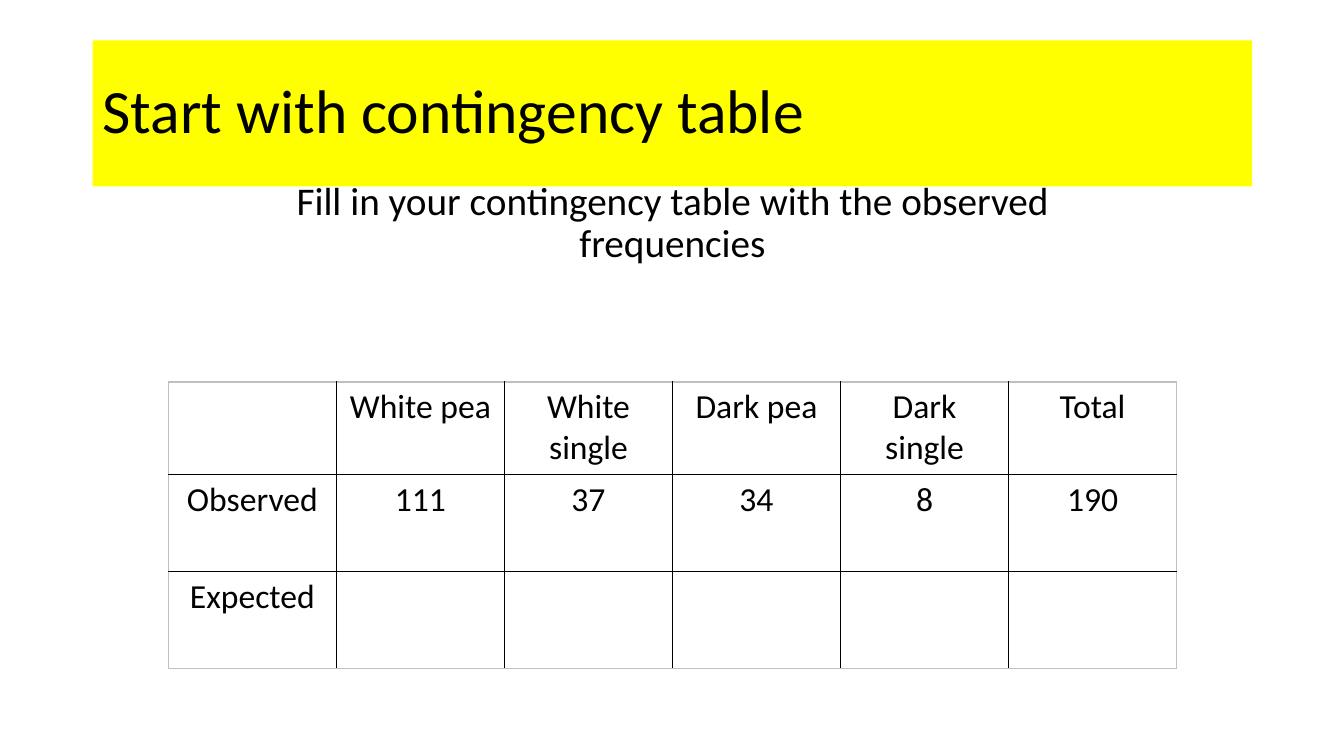
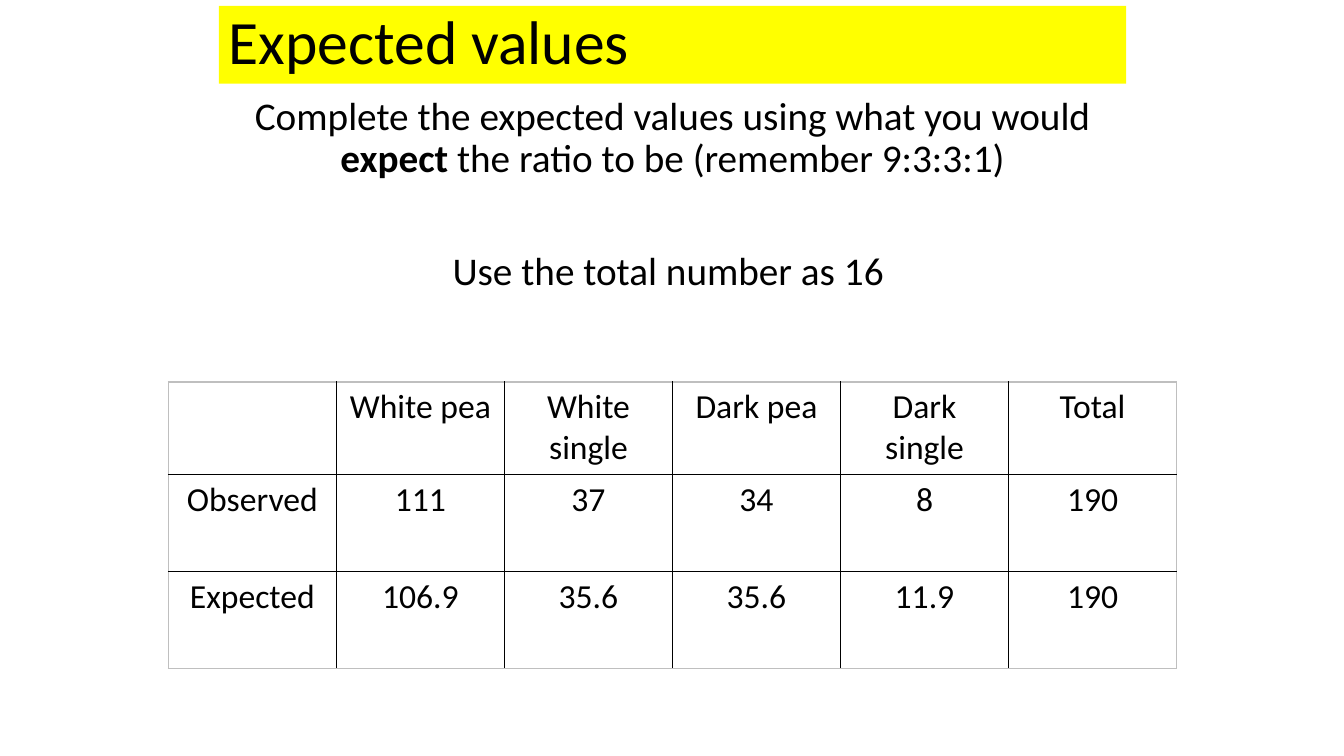
from lxml.etree import SubElement
from pptx import Presentation
from pptx.dml.color import RGBColor
from pptx.enum.shapes import MSO_SHAPE as Shape
from pptx.enum.text import MSO_ANCHOR as Anchor, PP_ALIGN as Align
from pptx.oxml.ns import qn
from pptx.util import Inches, Pt

BLACK = RGBColor(0, 0, 0)
YELLOW = RGBColor(255, 255, 0)
GREY = RGBColor(191, 191, 191)

HEADER = ["", "White pea", "White single", "Dark pea", "Dark single", "Total"]
OBSERVED = ["Observed", "111", "37", "34", "8", "190"]
EXPECTED = ["Expected", "106.9", "35.6", "35.6", "11.9", "190"]
ROW_HEIGHTS = [0.92, 0.96, 0.96]


class Deck:
    """Hold the shared style and the slide being filled."""

    font = "Calibri"

    def __init__(self):
        self.deck = Presentation()
        self.deck.slide_width = Inches(13.33)
        self.deck.slide_height = Inches(7.5)
        self.slide = None

    def new_slide(self):
        self.slide = self.deck.slides.add_slide(self.deck.slide_layouts[6])

    def style(self, run, size, bold=False):
        run.font.name = self.font
        run.font.size = Pt(size)
        run.font.bold = bold
        run.font.color.rgb = BLACK

    def title(self, text, left, top, width, height):
        band = self.slide.shapes.add_shape(
            Shape.RECTANGLE, Inches(left), Inches(top), Inches(width), Inches(height))
        band.shadow.inherit = False
        band.fill.solid()
        band.fill.fore_color.rgb = YELLOW
        band.line.fill.background()
        frame = band.text_frame
        frame.text = text
        frame.vertical_anchor = Anchor.MIDDLE
        heading = frame.paragraphs[0]
        heading.alignment = Align.LEFT
        heading.line_spacing = 0.9
        self.style(heading.runs[0], 44)

    def body(self, top, paragraphs):
        frame = self.slide.shapes.add_textbox(
            Inches(2.17), Inches(top), Inches(9), Inches(5.75)).text_frame
        frame.word_wrap = True
        for index, (space_before, pieces) in enumerate(paragraphs):
            paragraph = frame.add_paragraph() if index else frame.paragraphs[0]
            paragraph.alignment = Align.CENTER
            paragraph.line_spacing = 0.9
            paragraph.space_before = Pt(space_before)
            for text, bold in pieces:
                run = paragraph.add_run()
                run.text = text
                self.style(run, 28, bold)

    def border(self, cell, side, color):
        line = SubElement(cell._tc.get_or_add_tcPr(), qn(f"a:ln{side}"), w=str(Pt(1)))
        fill = SubElement(line, qn("a:solidFill"))
        SubElement(fill, qn("a:srgbClr"), val=str(color))

    def table(self, rows):
        last_row, last_column = len(rows) - 1, len(rows[0]) - 1
        table = self.slide.shapes.add_table(
            len(rows), len(rows[0]), Inches(1.67), Inches(3.79),
            Inches(10), Inches(sum(ROW_HEIGHTS))).table
        table.first_row = table.horz_banding = False
        for r, values in enumerate(rows):
            table.rows[r].height = Inches(ROW_HEIGHTS[r])
            for c, value in enumerate(values):
                cell = table.cell(r, c)
                edges = {"L": c == 0, "R": c == last_column,
                         "T": r == 0, "B": r == last_row}
                for side, outer in edges.items():
                    self.border(cell, side, GREY if outer else BLACK)
                cell.fill.background()
                cell.text_frame.text = value
                paragraph = cell.text_frame.paragraphs[0]
                paragraph.alignment = Align.CENTER
                for run in paragraph.runs:
                    self.style(run, 24)

    def save(self):
        self.deck.save("out.pptx")


def main():
    deck = Deck()

    deck.new_slide()
    deck.title("Start with contingency table", 0.92, 0.4, 11.5, 1.45)
    deck.body(1.75, [
        (10, [("Fill in your contingency table with the observed frequencies", False)]),
    ])
    deck.table([HEADER, OBSERVED, EXPECTED[:1] + [""] * 5])

    deck.new_slide()
    deck.title("Expected values", 2.17, 0.06, 9, 0.77)
    deck.body(0.91, [
        (10, [("Complete the expected values using what you would ", False),
              ("expect ", True),
              ("the ratio to be (remember 9:3:3:1)", False)]),
        (50, [("Use the total number as 16 ", False)]),
    ])
    deck.table([HEADER, OBSERVED, EXPECTED])

    deck.save()


if __name__ == "__main__":
    main()
